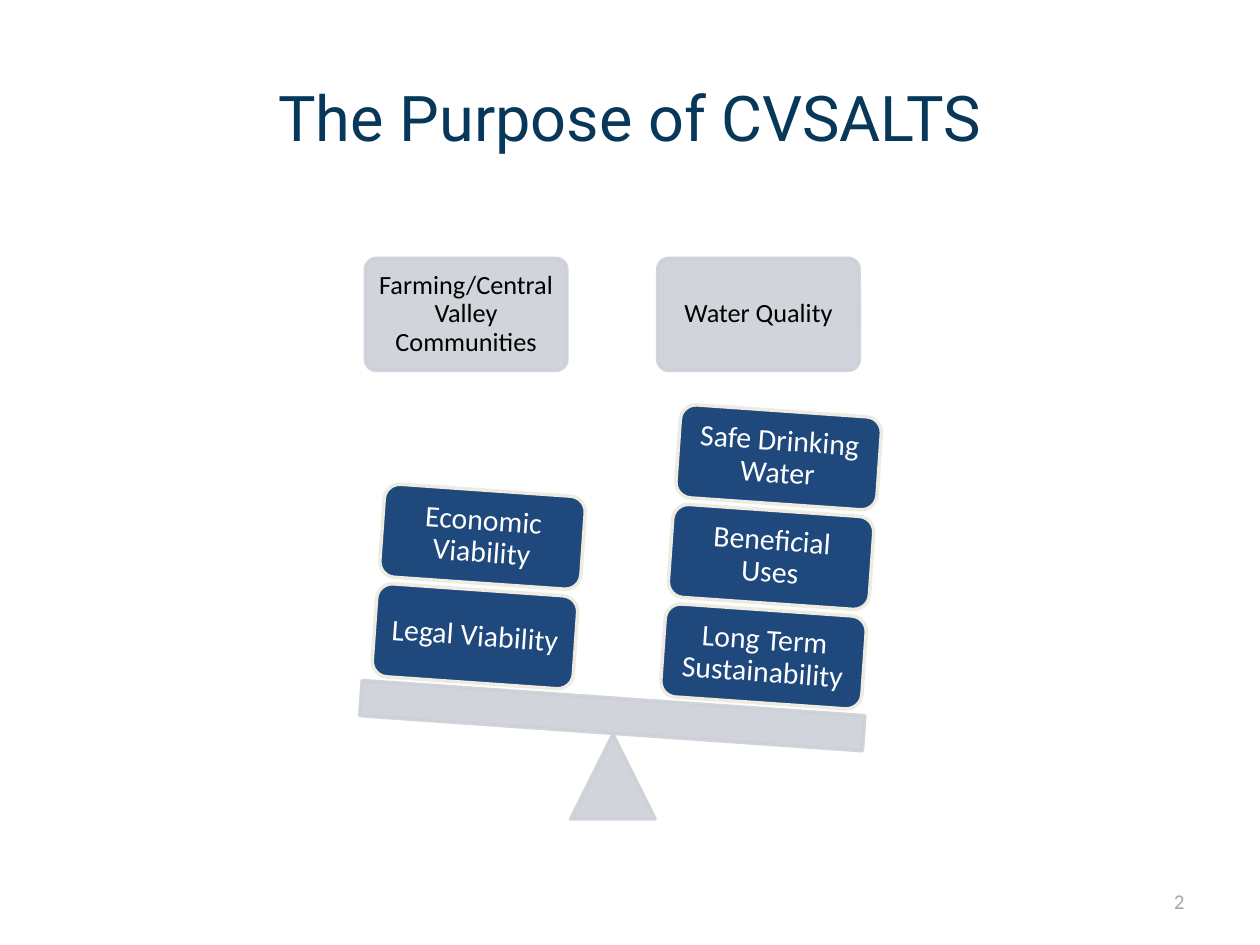
"""Build a slide with a tilted scale that weighs two stacks of goals."""
from lxml import etree
from pptx import Presentation
from pptx.dml.color import RGBColor
from pptx.enum import shapes, text
from pptx.oxml.ns import qn
from pptx.util import Inches, Pt

COLORS = {"title": "073859", "gray": "CDD0D7", "navy": "1F497D", "cream": "EEECE1",
          "black": "000000", "white": "FFFFFF", "number": "A6A6A6"}
CELL = 0.1
COLS, ROWS = 100, 75
TILT = 4
STEP_X, STEP_Y = 0.6, -7.9
KIND = shapes.MSO_SHAPE
ALIGN = text.PP_ALIGN


def grid(*cells):
    """Turn grid cells into lengths."""
    return [Inches(c * CELL) for c in cells]


def rgb(name):
    """Look up a colour by name."""
    return RGBColor.from_string(COLORS[name])


def write(sp, words, size, color, font="Calibri", align=ALIGN.CENTER, inset=None, spacing=None):
    """Write one middle-anchored paragraph, with odd parts between bars in italics."""
    tf = sp.text_frame
    tf.word_wrap = True
    tf.vertical_anchor = text.MSO_ANCHOR.MIDDLE
    if inset:
        tf.margin_left = tf.margin_right = tf.margin_top = tf.margin_bottom = Inches(inset)
    p = tf.paragraphs[0]
    p.alignment = align
    p.line_spacing = spacing
    for i, part in enumerate(words.split("|")):
        r = p.add_run()
        r.text = part
        r.font.size = Pt(size)
        r.font.name = font
        r.font.italic = i % 2 == 1
        r.font.color.rgb = rgb(color)


def add_label(slide, box, words, size, color, **style):
    """Add a plain text box."""
    write(slide.shapes.add_textbox(*grid(*box)), words, size, color, **style)


def add_block(slide, kind, box, fill, line, alpha=None, tilt=0):
    """Add a filled and outlined shape."""
    sp = slide.shapes.add_shape(kind, *grid(*box))
    sp.shadow.inherit = False
    sp.rotation = tilt
    sp.fill.solid()
    sp.fill.fore_color.rgb = rgb(fill)
    sp.line.color.rgb = rgb(line)
    sp.line.width = Pt(2)
    if alpha:
        for clr in sp._element.spPr.iter(qn("a:srgbClr")):
            etree.SubElement(clr, qn("a:alpha")).set("val", str(alpha * 1000))
    return sp


def add_gray(slide, kind, box, tilt=0):
    """Add a translucent gray part of the scale."""
    return add_block(slide, kind, box, "gray", "gray", alpha=90, tilt=tilt)


def add_heading(slide, left, words):
    """Add the heading above one side of the scale."""
    sp = add_gray(slide, KIND.ROUNDED_RECTANGLE, (left, 20.5, 16, 8.9))
    sp.adjustments[0] = 0.1
    write(sp, words, 15, "black", inset=0.06, spacing=0.9)


def add_stack(slide, left, top, goals):
    """Pile tilted goals upwards from the beam."""
    for i, goal in enumerate(goals):
        box = (left + i * STEP_X, top + i * STEP_Y, 16, 7.4)
        sp = add_block(slide, KIND.ROUNDED_RECTANGLE, box, "navy", "cream", tilt=TILT)
        write(sp, goal, 17, "white", inset=0.07, spacing=0.9)


def main():
    """Build and save the slide."""
    prs = Presentation()
    prs.slide_width, prs.slide_height = grid(COLS, ROWS)
    slide = prs.slides.add_slide(prs.slide_layouts[6])
    add_label(slide, (5, 3, 90, 12.5), "The Purpose of CVSALTS", 36, "title", font="Roboto")
    add_heading(slide, 29, "Farming/Central Valley Communities")
    add_heading(slide, 52.2, "Water Quality")
    add_gray(slide, KIND.ISOSCELES_TRIANGLE, (45.3, 58.3, 6.7, 6.7))
    add_gray(slide, KIND.RECTANGLE, (28.6, 55.4, 40, 2.8), tilt=TILT)
    add_stack(slide, 52.6, 48.4,
              ["Long Term Sustainability", "Benefi|c|ial Uses", "Safe Drinking Water"])
    add_stack(slide, 29.7, 46.8, ["Legal Viability", "Economic Viability"])
    add_label(slide, (71.7, 69.5, 23.3, 4), "2", 12, "number", align=ALIGN.RIGHT)
    prs.save("out.pptx")


if __name__ == "__main__":
    main()
